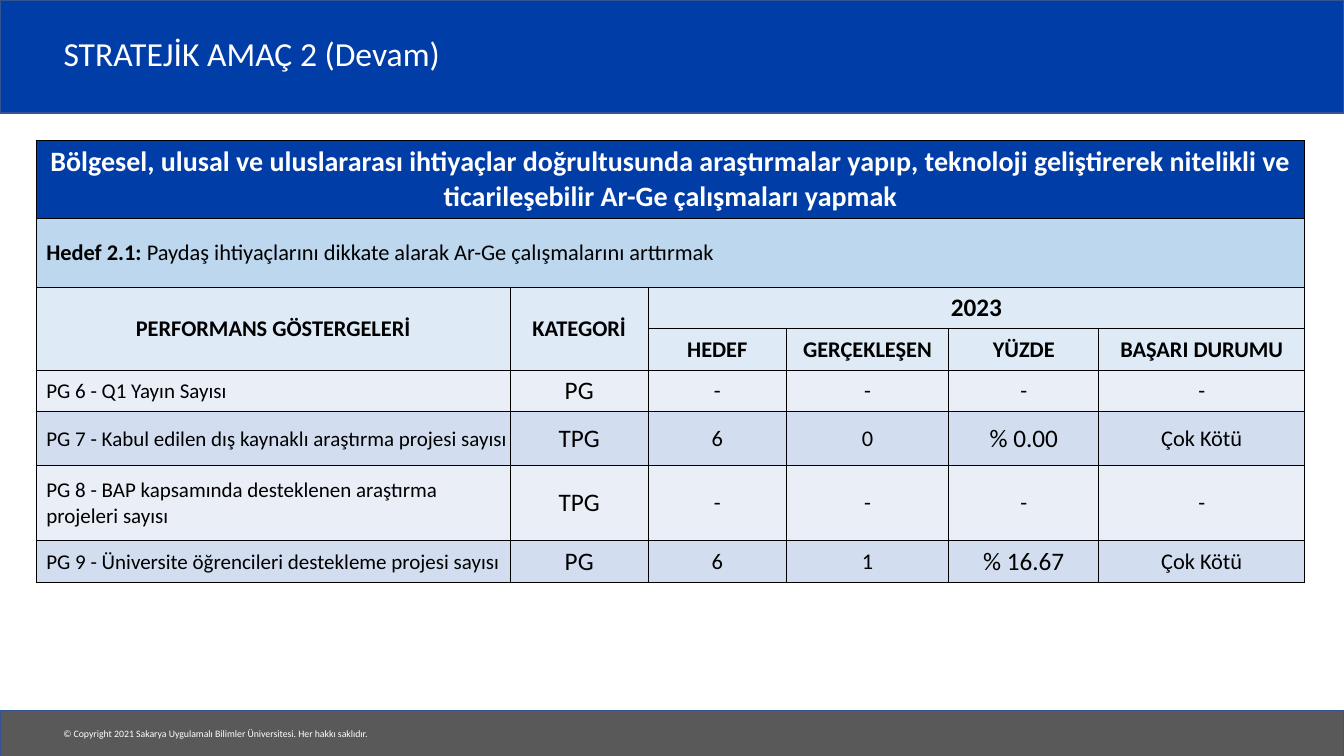
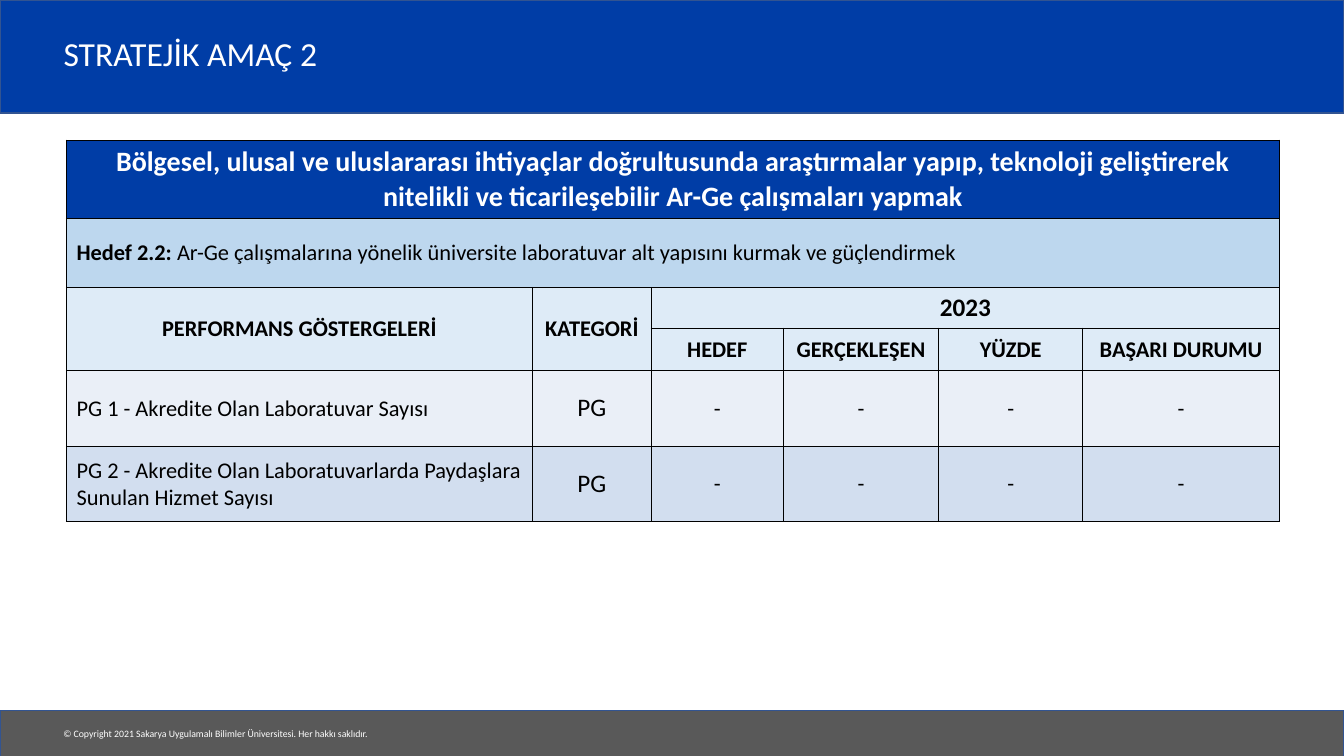
from dataclasses import dataclass

from pptx import Presentation
from pptx.dml.color import RGBColor
from pptx.enum.shapes import MSO_SHAPE
from pptx.enum.text import MSO_ANCHOR, MSO_AUTO_SIZE, PP_ALIGN
from pptx.oxml import parse_xml
from pptx.oxml.ns import nsdecls
from pptx.util import Inches, Pt

RECTANGLE = MSO_SHAPE.RECTANGLE
MIDDLE = MSO_ANCHOR.MIDDLE
NO_FIT = MSO_AUTO_SIZE.NONE
LEFT, CENTER = PP_ALIGN.LEFT, PP_ALIGN.CENTER
TITLE_ONLY = 5


@dataclass(frozen=True)
class Theme:
    font: str = "Calibri"
    white: str = "FFFFFF"
    black: str = "000000"
    blue: str = "003DA6"
    gray: str = "595959"
    band_line: str = "325491"
    target_fill: str = "BDD7EE"
    heading_fill: str = "DEEBF7"
    row_fills: tuple = ("EAEFF7", "D2DEEF")
    title_size: int = 24
    goal_size: int = 20
    large_size: int = 18
    body_size: int = 16
    copyright_size: int = 7


THEME = Theme()
PAGE_WIDTH, PAGE_HEIGHT = 13.33, 7.5
COPYRIGHT = "© Copyright 2021 Sakarya Uygulamalı Bilimler Üniversitesi. Her hakkı saklıdır."
GOAL = ("Bölgesel, ulusal ve uluslararası ihtiyaçlar doğrultusunda araştırmalar yapıp, "
        "teknoloji geliştirerek nitelikli ve ticarileşebilir Ar-Ge çalışmaları yapmak")
YEAR = "2023"
HEADINGS = ["PERFORMANS GÖSTERGELERİ", "KATEGORİ", "HEDEF", "GERÇEKLEŞEN", "YÜZDE", "BAŞARI DURUMU"]
HEADER_HEIGHTS = [0.78, 0.68, 0.4, 0.42]
TABLE_TOP = 1.39
NO_VALUES = ["-"] * 4

SLIDES = [
    {
        "title": "STRATEJİK AMAÇ 2 (Devam)",
        "target": ("Hedef 2.1: ", "Paydaş ihtiyaçlarını dikkate alarak Ar-Ge çalışmalarını arttırmak"),
        "left": 0.36,
        "columns": [4.7, 1.37, 1.37, 1.61, 1.49, 2.04],
        "heights": [0.41, 0.53, 0.75, 0.41],
        "label_size": 15,
        "rows": [
            ["PG 6 - Q1 Yayın Sayısı", "PG", *NO_VALUES],
            ["PG 7 - Kabul edilen dış kaynaklı araştırma projesi sayısı", "TPG",
             "6", "0", "% 0.00", "Çok Kötü"],
            ["PG 8 - BAP kapsamında desteklenen araştırma projeleri sayısı", "TPG", *NO_VALUES],
            ["PG 9 - Üniversite öğrencileri destekleme projesi sayısı", "PG",
             "6", "1", "% 16.67", "Çok Kötü"],
        ],
    },
    {
        "title": "STRATEJİK AMAÇ 2",
        "target": ("Hedef 2.2: ", "Ar-Ge çalışmalarına yönelik üniversite laboratuvar alt yapısını "
                   "kurmak ve güçlendirmek"),
        "left": 0.66,
        "columns": [4.62, 1.18, 1.31, 1.54, 1.43, 1.95],
        "heights": [0.75, 0.75],
        "label_size": 16,
        "rows": [
            ["PG 1 - Akredite Olan Laboratuvar Sayısı", "PG", *NO_VALUES],
            ["PG 2 - Akredite Olan Laboratuvarlarda Paydaşlara Sunulan Hizmet Sayısı", "PG", *NO_VALUES],
        ],
    },
]


def rgb(color):
    return RGBColor.from_string(color)


def style_font(font, size, color, bold=False):
    font.name = THEME.font
    font.size = Pt(size)
    font.bold = bold
    font.color.rgb = rgb(color)


def add_band(page, top, height, color):
    band = page.shapes.add_shape(RECTANGLE, 0, Inches(top), Inches(PAGE_WIDTH), Inches(height))
    band.shadow.inherit = False
    band.fill.solid()
    band.fill.fore_color.rgb = rgb(color)
    band.line.color.rgb = rgb(THEME.band_line)
    band.line.width = Pt(1)


def add_copyright(page):
    box = page.shapes.add_textbox(Inches(0.53), Inches(7.17), Inches(3.29), Inches(0.22))
    para = box.text_frame.paragraphs[0]
    para.text = COPYRIGHT
    style_font(para.font, THEME.copyright_size, THEME.white)


def set_title(page, text):
    title = page.shapes.title
    title.left, title.top = Inches(0.53), Inches(0.19)
    title.width, title.height = Inches(11.03), Inches(0.73)
    frame = title.text_frame
    frame.auto_size = NO_FIT
    frame.vertical_anchor = MIDDLE
    para = frame.paragraphs[0]
    para.text = text
    para.alignment = LEFT
    para.line_spacing = 0.9
    style_font(para.font, THEME.title_size, THEME.white)
    # Bring the title in front of the bands
    page.shapes.element.append(title.element)


def add_page(deck, title):
    page = deck.slides.add_slide(deck.slide_layouts[TITLE_ONLY])
    add_band(page, 0, 1.12, THEME.blue)
    add_band(page, 7.05, 0.46, THEME.gray)
    add_copyright(page)
    set_title(page, title)
    return page


def format_cell(cell, fill):
    properties = cell._tc.get_or_add_tcPr()
    for side in ("lnL", "lnR", "lnT", "lnB"):
        properties.append(parse_xml(
            f'<a:{side} {nsdecls("a")} w="{Pt(1)}"><a:solidFill>'
            f'<a:srgbClr val="{THEME.black}"/></a:solidFill></a:{side}>'))
    cell.fill.solid()
    cell.fill.fore_color.rgb = rgb(fill)
    cell.vertical_anchor = MIDDLE


def write_cell(cell, text, size, color=THEME.black, bold=False, alignment=CENTER):
    para = cell.text_frame.paragraphs[0]
    para.text = text
    para.alignment = alignment
    style_font(para.font, size, color, bold)


def write_target(cell, label, text):
    para = cell.text_frame.paragraphs[0]
    for words, bold in ((label, True), (text, False)):
        span = para.add_run()
        span.text = words
        style_font(span.font, THEME.body_size, THEME.black, bold)


def write_headings(table):
    for column, heading in enumerate(HEADINGS):
        row = 2 if column < 2 else 3
        write_cell(table.cell(row, column), heading, THEME.body_size, bold=True)
    write_cell(table.cell(2, 2), YEAR, THEME.large_size, bold=True)


def write_indicator(cells, values, label_size):
    label_cell = cells[0]
    label_cell.margin_left = Inches(0.1)
    label_cell.margin_right = label_cell.margin_top = Inches(0.01)
    label_cell.margin_bottom = 0
    write_cell(label_cell, values[0], label_size, alignment=LEFT)
    for column, value in enumerate(values[1:], 1):
        large = column == 1 or value.startswith("%")
        write_cell(cells[column], value, THEME.large_size if large else THEME.body_size)


def add_indicator_table(page, content):
    columns, rows = content["columns"], content["rows"]
    heights = HEADER_HEIGHTS + content["heights"]
    table = page.shapes.add_table(
        len(heights), len(columns), Inches(content["left"]), Inches(TABLE_TOP),
        Inches(sum(columns)), Inches(sum(heights))).table
    for column, width in zip(table.columns, columns):
        column.width = Inches(width)
    for row, height in zip(table.rows, heights):
        row.height = Inches(height)

    # Fills and borders, row by row
    fills = [THEME.blue, THEME.target_fill, THEME.heading_fill, THEME.heading_fill]
    fills += [THEME.row_fills[index % 2] for index in range(len(rows))]
    for row, fill in zip(table.rows, fills):
        for cell in row.cells:
            format_cell(cell, fill)

    # Merged header cells: first and last (row, column)
    for first, last in (((0, 0), (0, 5)), ((1, 0), (1, 5)), ((2, 0), (3, 0)),
                        ((2, 1), (3, 1)), ((2, 2), (2, 5))):
        table.cell(*first).merge(table.cell(*last))

    # Text
    write_cell(table.cell(0, 0), GOAL, THEME.goal_size, THEME.white, bold=True)
    write_target(table.cell(1, 0), *content["target"])
    write_headings(table)
    for index, values in enumerate(rows, len(HEADER_HEIGHTS)):
        write_indicator(table.rows[index].cells, values, content["label_size"])


def main():
    deck = Presentation()
    deck.slide_width, deck.slide_height = Inches(PAGE_WIDTH), Inches(PAGE_HEIGHT)
    for content in SLIDES:
        page = add_page(deck, content["title"])
        add_indicator_table(page, content)
    deck.save("out.pptx")


if __name__ == "__main__":
    main()
